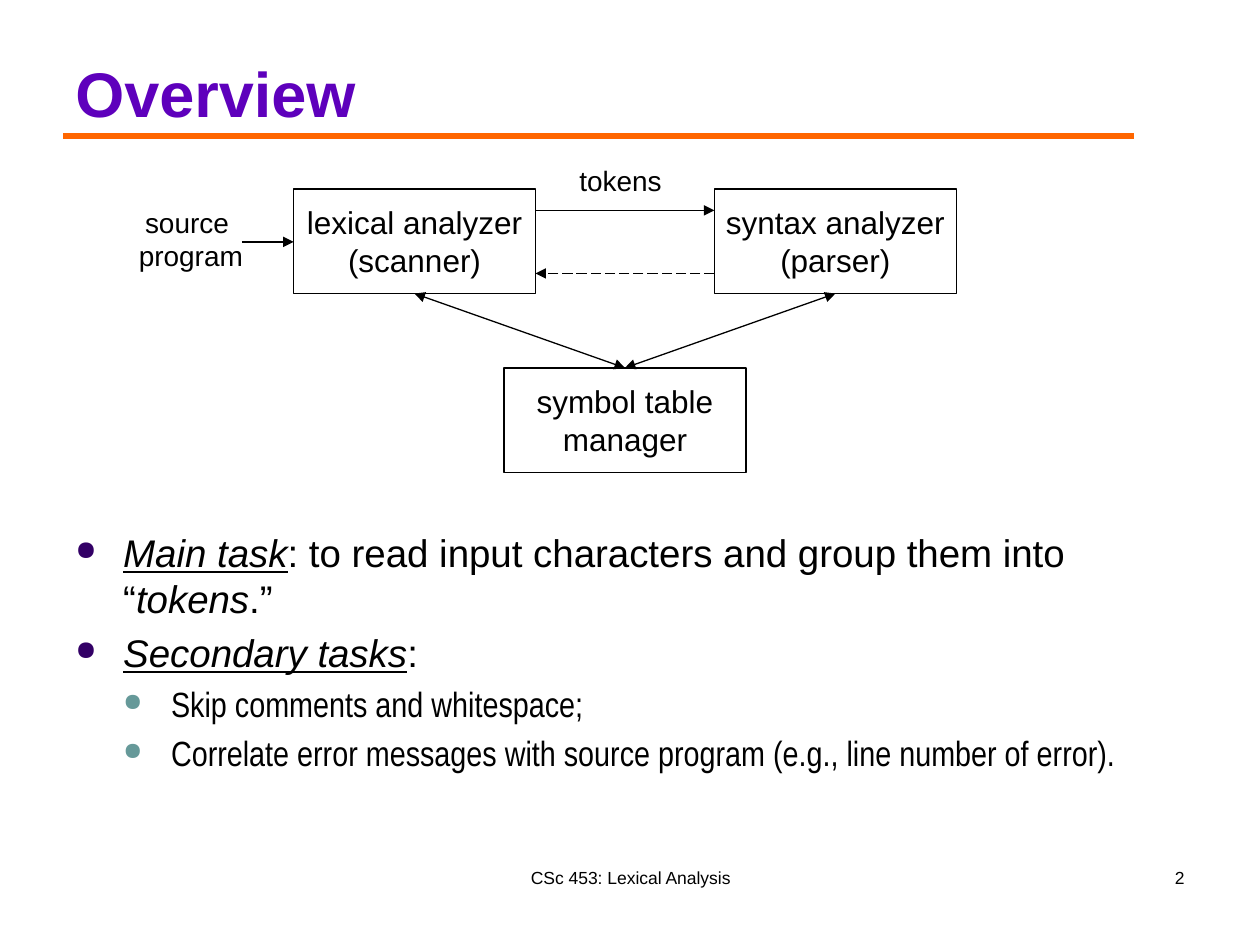
from dataclasses import dataclass

from lxml import etree
from pptx import Presentation
from pptx.dml.color import RGBColor
from pptx.enum.dml import MSO_LINE
from pptx.enum.shapes import MSO_CONNECTOR, MSO_SHAPE
from pptx.enum.text import MSO_ANCHOR, PP_ALIGN
from pptx.oxml.ns import qn
from pptx.util import Inches, Pt

STRAIGHT, RECTANGLE = MSO_CONNECTOR.STRAIGHT, MSO_SHAPE.RECTANGLE
LONG_DASH = MSO_LINE.LONG_DASH
TOP, MIDDLE, BOTTOM = MSO_ANCHOR.TOP, MSO_ANCHOR.MIDDLE, MSO_ANCHOR.BOTTOM
LEFT, CENTER, RIGHT = PP_ALIGN.LEFT, PP_ALIGN.CENTER, PP_ALIGN.RIGHT


@dataclass(frozen=True)
class Theme:
    ink: str = "000000"
    title: str = "5E00BC"
    rule: str = "FF6600"
    bullets: tuple = ("330066", "669999")
    font: str = "Arial"
    body_fonts: tuple = ("Arial", "Arial Narrow")
    body_sizes: tuple = (22, 20)
    title_size: int = 36
    box_size: int = 18
    label_size: int = 16
    footer_size: int = 10
    thin: float = 0.75
    thick: float = 3.75


THEME = Theme()


@dataclass(frozen=True)
class Run:
    text: str
    italic: bool = False
    underline: bool = False


@dataclass(frozen=True)
class Task:
    runs: tuple
    level: int = 0


@dataclass(frozen=True)
class Component:
    lines: tuple
    left: float
    top: float
    width: float = 1.92
    height: float = 0.83

    @property
    def right(self) -> float:
        return self.left + self.width

    @property
    def bottom(self) -> float:
        return self.top + self.height

    @property
    def center(self) -> float:
        return self.left + self.width / 2


@dataclass(frozen=True)
class Arrow:
    start: tuple
    end: tuple
    both_ways: bool = False
    dashed: bool = False


SCANNER = Component(("lexical analyzer", "(scanner)"), 2.33, 1.5)
PARSER = Component(("syntax analyzer", "(parser)"), 5.67, 1.5)
SYMBOLS = Component(("symbol table", "manager"), 4, 2.92)

ARROWS = (
    Arrow((1.92, 1.92), (SCANNER.left, 1.92)),
    Arrow((SCANNER.right, 1.67), (PARSER.left, 1.67)),
    Arrow((PARSER.left, 2.17), (SCANNER.right, 2.17), dashed=True),
    *(Arrow((part.center, part.bottom), (SYMBOLS.center, SYMBOLS.top), both_ways=True)
      for part in (SCANNER, PARSER)),
)

TASKS = (
    Task((Run("Main task", True, True),
          Run(": to read input characters and group them into “"),
          Run("tokens", True), Run(".”"))),
    Task((Run("Secondary tasks", True, True), Run(":"))),
    Task((Run("Skip comments and whitespace;"),), 1),
    Task((Run("Correlate error messages with source program "
              "(e.g., line number of error)."),), 1),
)


def add_run(paragraph, text: str, *, size: float, font: str = THEME.font,
            color: str = THEME.ink, bold: bool = False, italic: bool = False,
            underline: bool = False) -> None:
    run = paragraph.add_run()
    run.text = text
    style = run.font
    style.name, style.size = font, Pt(size)
    style.bold, style.italic, style.underline = bold, italic, underline
    style.color.rgb = RGBColor.from_string(color)


def paragraphs(frame, count: int) -> list:
    return [frame.paragraphs[0]] + [frame.add_paragraph() for _ in range(count - 1)]


def write(frame, *lines: str, align=LEFT, anchor=TOP, wrap: bool = True, **style) -> None:
    frame.word_wrap, frame.vertical_anchor = wrap, anchor
    for paragraph, line in zip(paragraphs(frame, len(lines)), lines):
        paragraph.alignment = align
        add_run(paragraph, line, **style)


def add_frame(slide, left: float, top: float, width: float, height: float):
    return slide.shapes.add_textbox(*map(Inches, (left, top, width, height))).text_frame


def add_component(slide, part: Component) -> None:
    box = slide.shapes.add_shape(
        RECTANGLE, *map(Inches, (part.left, part.top, part.width, part.height)))
    box.shadow.inherit = False
    box.fill.background()
    box.line.color.rgb = RGBColor.from_string(THEME.ink)
    box.line.width = Pt(THEME.thin)
    write(box.text_frame, *part.lines, align=CENTER, anchor=MIDDLE, wrap=False,
          size=THEME.box_size)


def add_line(slide, start: tuple, end: tuple, color: str, width: float):
    line = slide.shapes.add_connector(STRAIGHT, *map(Inches, (*start, *end)))
    line.line.color.rgb = RGBColor.from_string(color)
    line.line.width = Pt(width)
    etree.SubElement(line._element.spPr, qn("a:effectLst"))
    return line


def add_arrow(slide, arrow: Arrow) -> None:
    line = add_line(slide, arrow.start, arrow.end, THEME.ink, THEME.thin)
    if arrow.dashed:
        line.line.dash_style = LONG_DASH
    outline = line._element.spPr.find(qn("a:ln"))
    for tag in ("a:headEnd", "a:tailEnd") if arrow.both_ways else ("a:tailEnd",):
        etree.SubElement(outline, qn(tag), type="triangle", w="med", len="med")


def add_bullet(paragraph, level: int) -> None:
    """Give the paragraph a hanging round bullet in its level's colour."""
    indent = Inches(0.38)
    props = paragraph._p.get_or_add_pPr()
    props.set("marL", str(indent * (level + 1)))
    props.set("indent", str(-indent))
    color = etree.SubElement(props, qn("a:buClr"))
    etree.SubElement(color, qn("a:srgbClr"), val=THEME.bullets[level])
    etree.SubElement(props, qn("a:buSzPct"), val="70000")
    etree.SubElement(props, qn("a:buChar"), char="●")


def add_tasks(slide) -> None:
    frame = add_frame(slide, 0.5, 4.15, 9, 2.55)
    frame.word_wrap = True
    for paragraph, task in zip(paragraphs(frame, len(TASKS)), TASKS):
        size = THEME.body_sizes[task.level]
        paragraph.level = task.level
        paragraph.space_before = Pt(size * 0.2)
        add_bullet(paragraph, task.level)
        for run in task.runs:
            add_run(paragraph, run.text, size=size, font=THEME.body_fonts[task.level],
                    italic=run.italic, underline=run.underline)


def main() -> None:
    deck = Presentation()
    deck.slide_width, deck.slide_height = Inches(10), Inches(7.5)
    slide = deck.slides.add_slide(deck.slide_layouts[6])

    add_line(slide, (0.5, 1.08), (9, 1.08), THEME.rule, THEME.thick)
    write(add_frame(slide, 3.42, 6.83, 3.17, 0.5), "CSc 453: Lexical Analysis",
          align=CENTER, size=THEME.footer_size)
    write(add_frame(slide, 7.17, 6.83, 2.33, 0.5), "2",
          align=RIGHT, size=THEME.footer_size)
    write(add_frame(slide, 0.5, 0.13, 9, 0.95), "Overview", anchor=BOTTOM,
          size=THEME.title_size, color=THEME.title, bold=True)
    add_tasks(slide)

    for part in (SCANNER, PARSER, SYMBOLS):
        add_component(slide, part)
    for arrow in ARROWS:
        add_arrow(slide, arrow)
    write(add_frame(slide, 1, 1.58, 1.03, 0.64), "source ", "program",
          align=CENTER, wrap=False, size=THEME.label_size)
    write(add_frame(slide, 4.5, 1.25, 0.86, 0.37), "tokens",
          wrap=False, size=THEME.label_size)

    deck.save("out.pptx")


if __name__ == "__main__":
    main()
